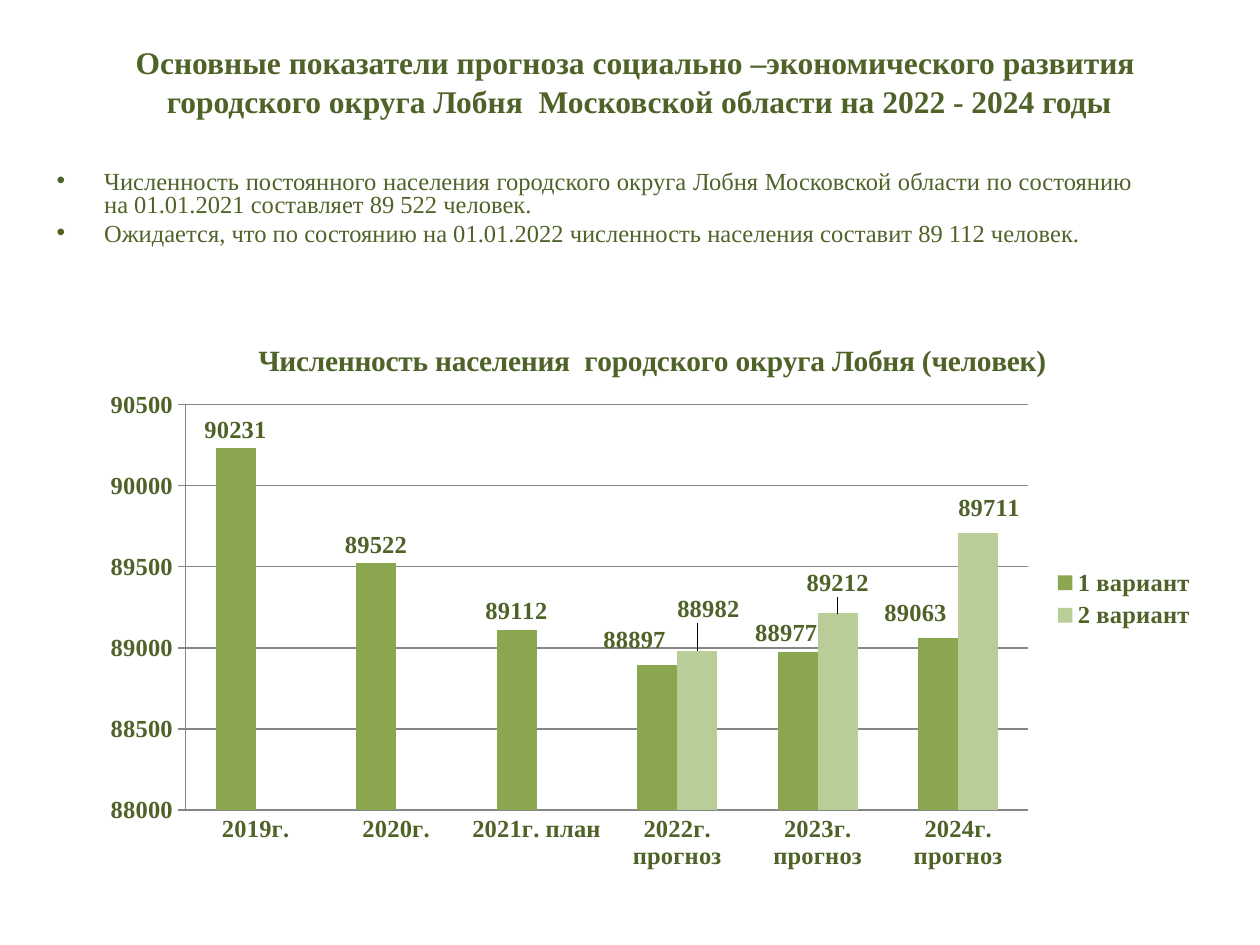
import pptx
import pptx.chart.data
import pptx.dml.color
import pptx.enum.chart
import pptx.enum.text
import pptx.oxml
import pptx.oxml.ns
import pptx.util
from dataclasses import dataclass

Cm = pptx.util.Cm
Pt = pptx.util.Pt
qn = pptx.oxml.ns.qn
Align = pptx.enum.text.PP_ALIGN
Place = pptx.enum.chart.XL_LABEL_POSITION
Mark = pptx.enum.chart.XL_TICK_MARK


@dataclass(frozen=True)
class Theme:
    """Colours, face and type sizes."""
    face: str = "Times New Roman"
    ink: str = "4F6228"
    rule: str = "868686"
    bars: tuple = ("8AA64F", "B9CD99")
    head: float = 18
    title: float = 16.8
    text: float = 14


def color(code):
    """Turn a hex code into a colour."""
    return pptx.dml.color.RGBColor.from_string(code)


def layout(**parts):
    """Make a manual chart layout from fractions."""
    root = pptx.oxml.parse_xml(
        '<c:layout xmlns:c="http://schemas.openxmlformats.org/drawingml/2006/chart">'
        "<c:manualLayout/></c:layout>")
    for name, value in parts.items():
        root[0].makeelement(qn("c:" + name), {})
        node = pptx.oxml.ns.qn("c:" + name)
        item = root[0].makeelement(node, {"val": str(value)})
        root[0].append(item)
    return root


class Deck:
    """Hold the style and the current slide."""

    def __init__(self, theme):
        """Start a deck with one blank slide."""
        self.theme = theme
        self.file = pptx.Presentation()
        self.file.slide_width, self.file.slide_height = Cm(25.4), Cm(19.05)
        self.slide = self.file.slides.add_slide(self.file.slide_layouts[6])

    def style(self, font, size, bold=False):
        """Apply the theme to a font."""
        font.name, font.size, font.bold = self.theme.face, Pt(size), bold
        font.color.rgb = color(self.theme.ink)

    def frame(self, box):
        """Add a wrapping text box and return its frame."""
        frame = self.slide.shapes.add_textbox(*map(Cm, box)).text_frame
        frame.word_wrap = True
        return frame

    def run(self, para, text, size, bold=False):
        """Add one styled run."""
        run = para.add_run()
        run.text = text
        self.style(run.font, size, bold)

    def head(self, box, lines):
        """Add the centred heading."""
        frame = self.frame(box)
        frame.vertical_anchor = pptx.enum.text.MSO_ANCHOR.MIDDLE
        para = frame.paragraphs[0]
        para.alignment, para.line_spacing = Align.CENTER, 1.05
        for i, line in enumerate(lines):
            if i:
                para.add_line_break()
            self.run(para, line, self.theme.head, True)

    def list(self, box, items):
        """Add a justified bullet list."""
        frame = self.frame(box)
        for i, item in enumerate(items):
            para = frame.add_paragraph() if i else frame.paragraphs[0]
            para.alignment, para.line_spacing = Align.JUSTIFY, 0.8
            para.space_before = Pt(0.2 * self.theme.text)
            props = para._p.get_or_add_pPr()
            props.set("marL", str(Cm(0.96)))
            props.set("indent", str(Cm(-0.96)))
            for tag, key, value in (("a:buFont", "typeface", "Arial"),
                                    ("a:buChar", "char", "•")):
                props.append(props.makeelement(qn(tag), {key: value}))
            self.run(para, item, self.theme.text)

    def chart(self, box, title, cats, rows, shifts):
        """Add the column chart."""
        data = pptx.chart.data.CategoryChartData(number_format="General")
        data.categories = cats
        for name, values in rows.items():
            data.add_series(name, values)
        kind = pptx.enum.chart.XL_CHART_TYPE.COLUMN_CLUSTERED
        chart = self.slide.shapes.add_chart(kind, *map(Cm, box), data).chart
        self.style(chart.font, self.theme.text, True)
        para = chart.chart_title.text_frame.paragraphs[0]
        self.run(para, title, self.theme.title, True)
        top = chart.chart_title._element
        for old in top.findall(qn("c:layout")):
            top.remove(old)
        top.find(qn("c:tx")).addnext(
            layout(xMode="edge", yMode="edge", x=0.15, y=0.04))
        area = chart._chartSpace.chart.plotArea
        for old in area.findall(qn("c:layout")):
            area.remove(old)
        area.insert(0, layout(layoutTarget="inner", xMode="edge", yMode="edge",
                              x=0.09, y=0.16, w=0.75, h=0.71))
        chart.has_legend = True
        chart.legend.position = pptx.enum.chart.XL_LEGEND_POSITION.RIGHT
        chart.legend.include_in_layout = False
        self.axes(chart)
        plot = chart.plots[0]
        plot.gap_width, plot.overlap, plot.vary_by_categories = 150, 0, False
        for row, code, moves in zip(plot.series, self.theme.bars, shifts):
            self.bars(row, code, moves)

    def axes(self, chart):
        """Set the scale, ticks and rules of both axes."""
        scale = chart.value_axis
        scale.minimum_scale, scale.maximum_scale = 88000, 90500
        scale.major_unit = 500
        scale.major_tick_mark = Mark.OUTSIDE
        chart.category_axis.major_tick_mark = Mark.NONE
        for part in (scale, scale.major_gridlines, chart.category_axis):
            part.format.line.color.rgb = color(self.theme.rule)
            part.format.line.width = Pt(0.75)

    def bars(self, row, code, moves):
        """Colour a series and place its labels."""
        row.format.fill.solid()
        row.format.fill.fore_color.rgb = color(code)
        labels = row.data_labels
        labels.show_value, labels.position = True, Place.OUTSIDE_END
        self.style(labels.font, self.theme.text, True)
        for i, (x, y) in moves.items():
            label = row.points[i].data_label
            label.position = Place.OUTSIDE_END
            self.style(label.font, self.theme.text, True)
            for node in row._element.iter(qn("c:dLbl")):
                mark = node.find(qn("c:idx"))
                if mark.get("val") == str(i):
                    mark.addnext(layout(x=x, y=y))


def main():
    """Build and save the slide."""
    deck = Deck(Theme())
    deck.head((-0.51, 0.33, 26.8, 2.59), (
        "Основные показатели прогноза социально –экономического развития ",
        "городского округа Лобня  Московской области на 2022 - 2024 годы"))
    deck.list((0.89, 3.33, 22.2, 2.39), (
        "Численность постоянного населения городского округа Лобня Московской "
        "области по состоянию на 01.01.2021 составляет 89 522 человек. ",
        "Ожидается, что по состоянию на 01.01.2022 численность населения "
        "составит 89 112 человек. "))
    deck.chart(
        (1.7, 6.32, 22.66, 11.51),
        "Численность населения  городского округа Лобня (человек)",
        ("2019г.", "2020г.", "2021г. план",
         "2022г. прогноз", "2023г. прогноз", "2024г. прогноз"),
        {"1 вариант": (90231, 89522, 89112, 88897, 88977, 89063),
         "2 вариант": (None, None, None, 88982, 89212, 89711)},
        ({3: (-0.02, -0.01), 4: (-0.01, 0), 5: (-0.02, -0.01)},
         {3: (0.01, -0.04), 4: (0, -0.02), 5: (0.01, -0.01)}))
    deck.file.save("out.pptx")


if __name__ == "__main__":
    main()
